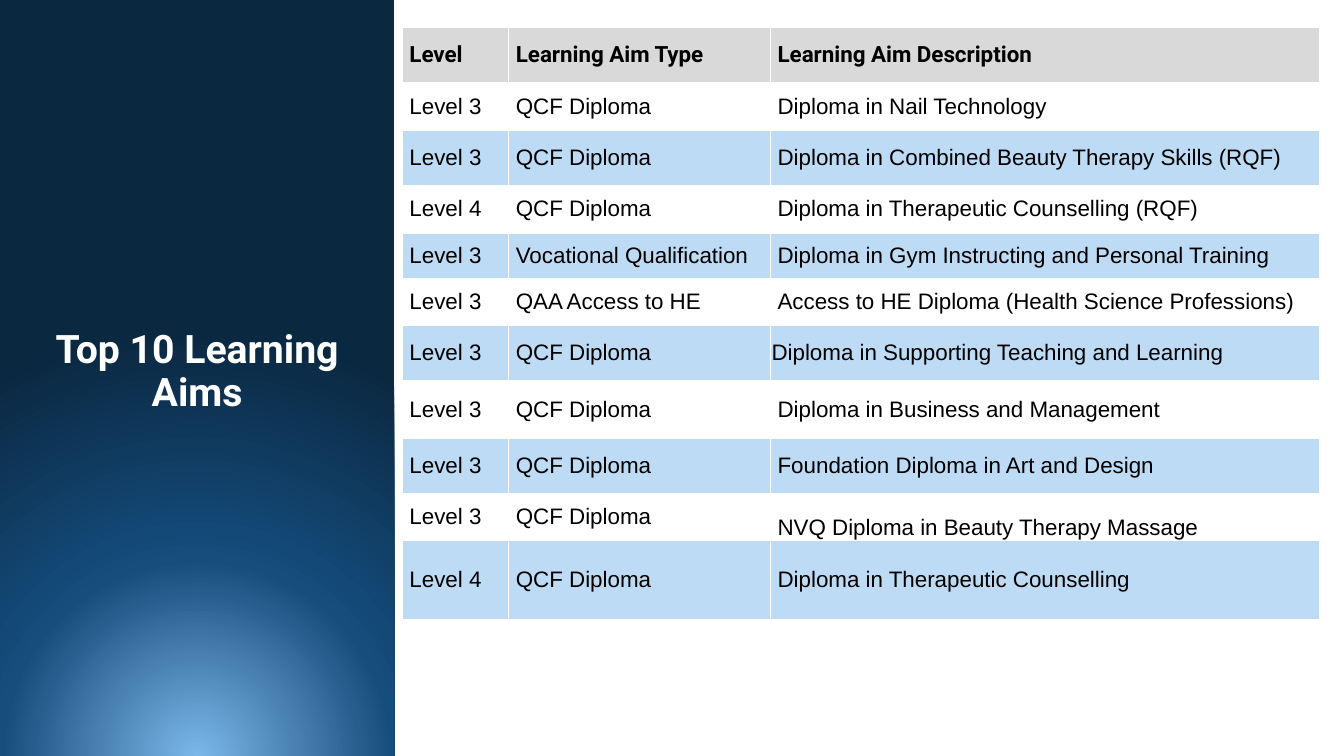
"""Build the Top 10 Learning Aims slide: a gradient title panel beside a table."""
import pptx
import pptx.dml.color
import pptx.enum.text
import pptx.oxml
import pptx.oxml.ns
import pptx.util

Pt = pptx.util.Pt
MIDDLE = pptx.enum.text.MSO_ANCHOR.MIDDLE
BOTTOM = pptx.enum.text.MSO_ANCHOR.BOTTOM
NAMESPACE = pptx.oxml.ns.nsdecls("a")


def color(value):
    return pptx.dml.color.RGBColor.from_string(value)


def style(para, name, size, bold, value):
    para.font.name = name
    para.font.size = Pt(size)
    para.font.bold = bold
    para.font.color.rgb = color(value)


deck = pptx.Presentation()
deck.slide_width, deck.slide_height = Pt(960), Pt(540)
page = deck.slides.add_slide(deck.slide_layouts[5])

title = page.shapes.title
title.left, title.top, title.width, title.height = Pt(0), Pt(0), Pt(281.5), Pt(540)
stops = "".join(
    f'<a:gs pos="{position * 1000}"><a:srgbClr val="{value}"/></a:gs>'
    for position, value in [(0, "7CB7E9"), (46, "154D7D"), (100, "0B2841")]
)
title.element.spPr.append(pptx.oxml.parse_xml(
    f'<a:gradFill {NAMESPACE} rotWithShape="1"><a:gsLst>{stops}</a:gsLst>'
    '<a:path path="circle"><a:fillToRect l="50000" t="130000" r="50000" b="-30000"/>'
    '</a:path></a:gradFill>'
))
frame = title.text_frame
frame.word_wrap = True
frame.auto_size = pptx.enum.text.MSO_AUTO_SIZE.NONE
frame.vertical_anchor = MIDDLE
frame.margin_bottom = Pt(12)
frame.text = "Top 10 Learning Aims"
heading = frame.paragraphs[0]
heading.alignment = pptx.enum.text.PP_ALIGN.CENTER
heading.line_spacing = 0.9
style(heading, "Roboto", 28, True, "FFFFFF")

rows = [
    (39.5, "Level", "Learning Aim Type", "Learning Aim Description"),
    (34, "Level 3", "QCF Diploma", "Diploma in Nail Technology"),
    (39.5, "Level 3", "QCF Diploma", "Diploma in Combined Beauty Therapy Skills (RQF)"),
    (34, "Level 4", "QCF Diploma", "Diploma in Therapeutic Counselling (RQF)"),
    (32.5, "Level 3", "Vocational Qualification", "Diploma in Gym Instructing and Personal Training"),
    (33.5, "Level 3", "QAA Access to HE", "Access to HE Diploma (Health Science Professions)"),
    (39.5, "Level 3", "QCF Diploma", "Diploma in Supporting Teaching and Learning"),
    (41, "Level 3", "QCF Diploma", "Diploma in Business and Management"),
    (39.5, "Level 3", "QCF Diploma", "Foundation Diploma in Art and Design"),
    (33.5, "Level 3", "QCF Diploma", "NVQ Diploma in Beauty Therapy Massage"),
    (56.5, "Level 4", "QCF Diploma", "Diploma in Therapeutic Counselling"),
]
widths = [76, 187, 392]
height = sum(row[0] for row in rows)
table = page.shapes.add_table(
    len(rows), len(widths), Pt(287.5), Pt(19.5), Pt(sum(widths)), Pt(height)
).table
table.first_row = True
table.horz_banding = False
for column, width in zip(table.columns, widths):
    column.width = Pt(width)

for index, (row_height, *texts) in enumerate(rows):
    table.rows[index].height = Pt(row_height)
    for cell, text in zip(table.rows[index].cells, texts):
        cell.text = text
        cell.vertical_anchor = BOTTOM if text.startswith("NVQ") else MIDDLE
        cell.margin_left = Pt(0.7 if "Supporting" in text else 5)
        cell.margin_right = Pt(0.7)
        cell.margin_top = cell.margin_bottom = Pt(0)
        if index == 0:
            cell.fill.solid()
            cell.fill.fore_color.rgb = color("D9D9D9")
        elif index % 2 == 0:
            cell.fill.solid()
            cell.fill.fore_color.rgb = color("BDDBF4")
        else:
            cell.fill.background()
        style(cell.text_frame.paragraphs[0], "Arial" if index else "Roboto", 16, index == 0, "000000")
        properties = cell._tc.get_or_add_tcPr()
        for order, side in enumerate(["lnL", "lnR", "lnT", "lnB"]):
            properties.insert(order, pptx.oxml.parse_xml(
                f'<a:{side} {NAMESPACE} w="12700"><a:solidFill><a:srgbClr val="FFFFFF"/>'
                f'</a:solidFill></a:{side}>'
            ))

deck.save("out.pptx")
